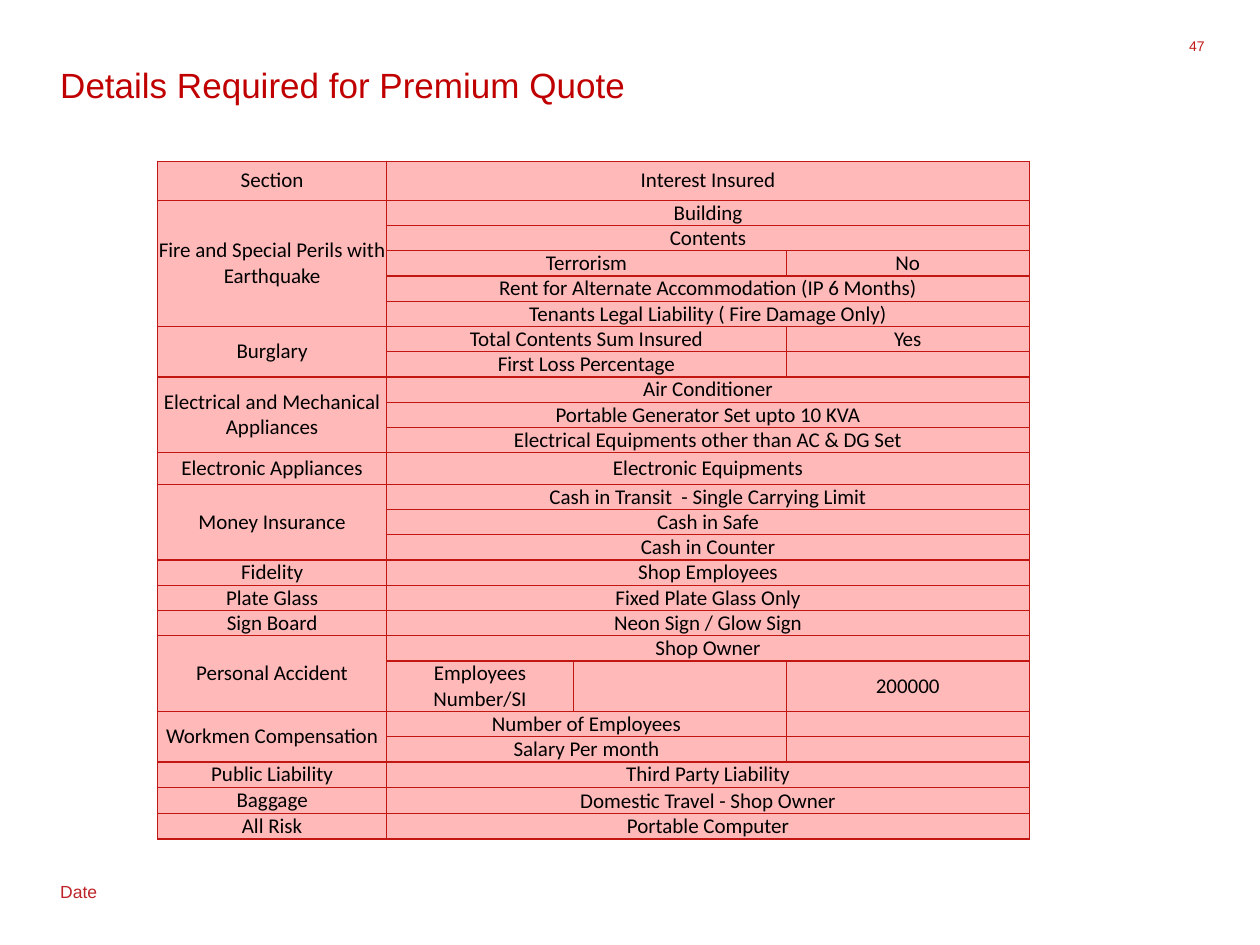
"""Build the slide listing the details required for a premium quote."""
from lxml import etree
from pptx import Presentation
from pptx.dml.color import RGBColor
from pptx.enum import text as t
from pptx.oxml.ns import qn
from pptx.util import Inches, Pt

COLORS = {"title": "C00000", "date": "BE2328", "number": "C21B17",
          "border": "C21612", "cell": "FFB9B9", "text": "000000"}

SECTIONS = [
    ("Section", [("Interest Insured",)]),
    ("Fire and Special Perils with Earthquake", [
        ("Building",),
        ("Contents",),
        ("Terrorism", "No"),
        ("Rent for Alternate Accommodation (IP 6 Months)",),
        ("Tenants Legal Liability ( Fire Damage Only)",)]),
    ("Burglary", [("Total Contents Sum Insured", "Yes"),
                  ("First Loss Percentage", "")]),
    ("Electrical and Mechanical Appliances", [
        ("Air Conditioner",),
        ("Portable Generator Set upto 10 KVA",),
        ("Electrical Equipments other than AC & DG Set",)]),
    ("Electronic Appliances", [("Electronic Equipments",)]),
    ("Money Insurance", [("Cash in Transit  - Single Carrying Limit",),
                         ("Cash in Safe",),
                         ("Cash in Counter",)]),
    ("Fidelity", [("Shop Employees",)]),
    ("Plate Glass", [("Fixed Plate Glass Only",)]),
    ("Sign Board", [("Neon Sign / Glow Sign",)]),
    ("Personal Accident", [("Shop Owner",),
                           ("Employees Number/SI", "", "200000")]),
    ("Workmen Compensation", [("Number of Employees", ""),
                              ("Salary Per month", "")]),
    ("Public Liability", [("Third Party Liability",)]),
    ("Baggage", [("Domestic Travel - Shop Owner",)]),
    ("All Risk", [("Portable Computer",)]),
]
COLUMN_WIDTHS = [1.82, 1.48, 1.69, 1.93]
ROW_HEIGHT = 0.2
SPECIAL_HEIGHTS = {0: 0.31, 11: 0.25, 19: 0.38, 23: 0.21}
BOTTOM_ROWS = {1, 2, 3, 4, 5, 8, 9, 12, 13, 14, 16, 17, 18, 22, 23}
INTEREST_STARTS = {1: [1], 2: [1, 3], 3: [1, 2, 3]}


def style_font(font, name, size, color):
    font.name = name
    font.size = Pt(size)
    font.color.rgb = RGBColor.from_string(COLORS[color])


def add_label(page, text, place, size, color, wrap=True, inset=None):
    box = page.shapes.add_textbox(*(Inches(length) for length in place))
    frame = box.text_frame
    frame.word_wrap = wrap
    if inset is not None:
        frame.margin_left = frame.margin_right = Inches(inset)
        frame.margin_top = frame.margin_bottom = Inches(inset)
    frame.text = text
    para = frame.paragraphs[0]
    style_font(para.runs[0].font, "Arial", size, color)
    return para


def style_cell(cell):
    cell.margin_left = cell.margin_right = cell.margin_top = cell.margin_bottom = 0
    cell.vertical_anchor = t.MSO_ANCHOR.MIDDLE
    properties = cell._tc.get_or_add_tcPr()
    for side in ("a:lnL", "a:lnR", "a:lnT", "a:lnB"):
        line = etree.SubElement(properties, qn(side), w=str(Pt(0.75)))
        fill = etree.SubElement(line, qn("a:solidFill"))
        etree.SubElement(fill, qn("a:srgbClr"), val=COLORS["border"])
    cell.fill.solid()
    cell.fill.fore_color.rgb = RGBColor.from_string(COLORS["cell"])
    para = cell.text_frame.paragraphs[0]
    para.alignment = t.PP_ALIGN.CENTER
    etree.SubElement(para._p, qn("a:endParaRPr"), sz="1200")


def fill_cell(cell, text):
    para = cell.text_frame.paragraphs[0]
    if text:
        span = para.add_run()
        span.text = text
        style_font(span.font, "Calibri", 12, "text")


def add_sections(page):
    row_count = sum(len(interests) for _, interests in SECTIONS)
    heights = [SPECIAL_HEIGHTS.get(row, ROW_HEIGHT) for row in range(row_count)]
    table = page.shapes.add_table(
        row_count, len(COLUMN_WIDTHS), Inches(1.25), Inches(1.28),
        Inches(sum(COLUMN_WIDTHS)), Inches(sum(heights))).table
    for column, width in zip(table.columns, COLUMN_WIDTHS):
        column.width = Inches(width)
    for row, height in zip(table.rows, heights):
        row.height = Inches(height)
    for cell in table.iter_cells():
        style_cell(cell)

    top = 0
    for section, interests in SECTIONS:
        heading = table.cell(top, 0)
        if len(interests) > 1:
            heading.merge(table.cell(top + len(interests) - 1, 0))
        fill_cell(heading, section)
        for row, texts in enumerate(interests, top):
            starts = INTEREST_STARTS[len(texts)]
            ends = [start - 1 for start in starts[1:]] + [3]
            for text, start, end in zip(texts, starts, ends):
                cell = table.cell(row, start)
                if end > start:
                    cell.merge(table.cell(row, end))
                if row in BOTTOM_ROWS:
                    cell.vertical_anchor = t.MSO_ANCHOR.BOTTOM
                fill_cell(cell, text)
        top += len(interests)


def main():
    deck = Presentation()
    deck.slide_width, deck.slide_height = Inches(10), Inches(7.5)
    page = deck.slides.add_slide(deck.slide_layouts[6])
    date = add_label(page, "Date", (0.38, 6.92, 0.5, 0.28), 10, "date", wrap=False)
    date.line_spacing = 1.15
    date.space_after = Pt(10)
    number = add_label(page, "47", (9.34, 0.3, 0.22, 0.2), 8, "number", inset=0)
    number.alignment = t.PP_ALIGN.RIGHT
    title = add_label(page, "Details Required for Premium Quote",
                      (0.38, 0.48, 9.17, 0.57), 20, "title")
    title.line_spacing = Pt(22)
    add_sections(page)
    deck.save("out.pptx")


if __name__ == "__main__":
    main()
